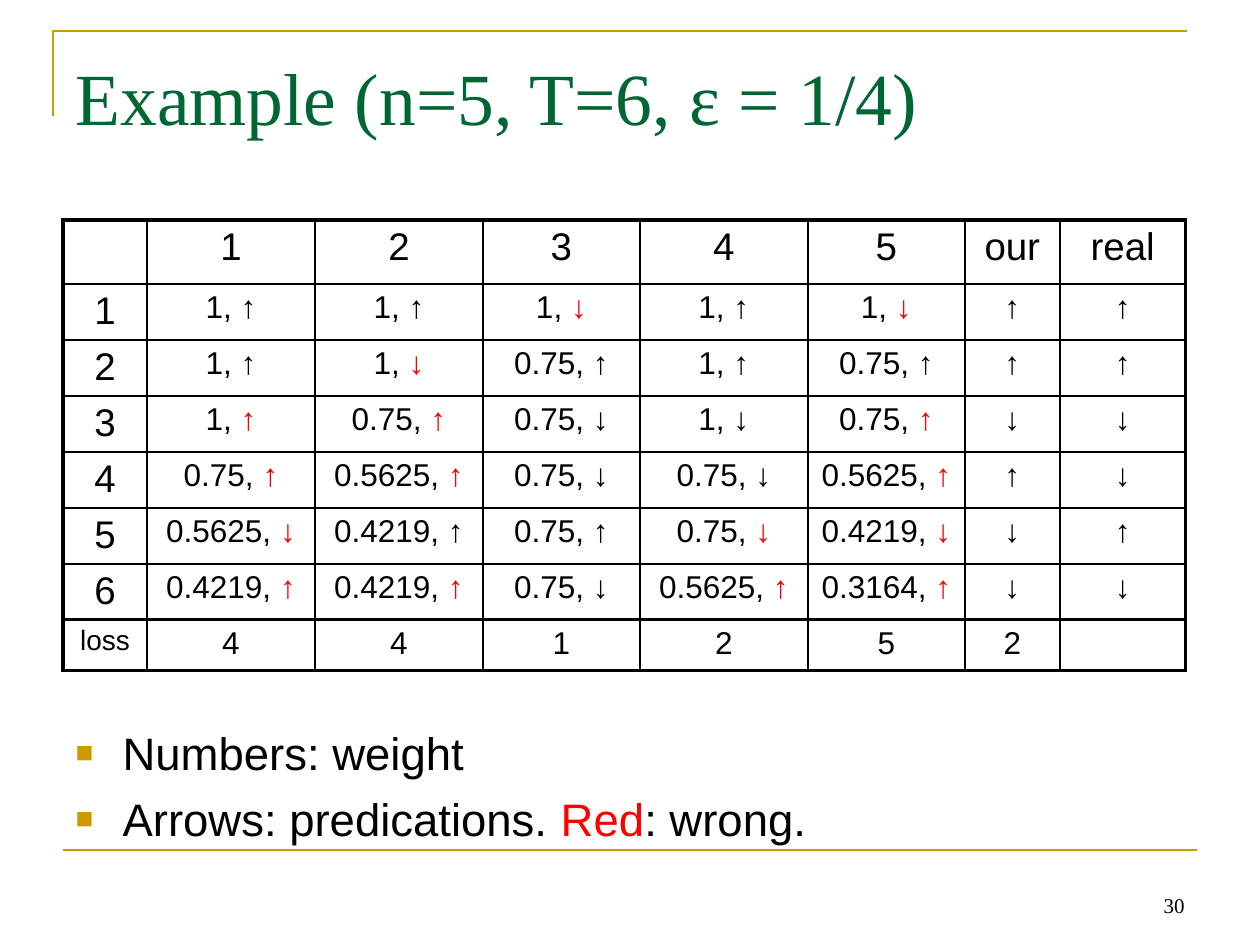
from lxml import etree
from pptx import Presentation
from pptx.dml.color import RGBColor
from pptx.enum.shapes import MSO_CONNECTOR
from pptx.enum.text import MSO_ANCHOR, MSO_AUTO_SIZE, PP_ALIGN
from pptx.oxml import parse_xml
from pptx.oxml.ns import nsdecls, qn
from pptx.util import Pt

LINE = MSO_CONNECTOR.STRAIGHT
TOP, BOTTOM = MSO_ANCHOR.TOP, MSO_ANCHOR.BOTTOM
LEFT, CENTER, RIGHT = PP_ALIGN.LEFT, PP_ALIGN.CENTER, PP_ALIGN.RIGHT
FIXED = MSO_AUTO_SIZE.NONE

GOLD = RGBColor(0xCC, 0x99, 0x00)
GREEN = RGBColor(0x00, 0x66, 0x33)
BLACK = RGBColor(0, 0, 0)
RED = RGBColor(0xFF, 0, 0)
SANS, SERIF = "Arial", "Times New Roman"

HEAD = ["", "1", "2", "3", "4", "5", "our", "real"]
ROUNDS = [
    ["1", "1, ↑", "1, ↑", "1, ↓", "1, ↑", "1, ↓", "↑", "↑"],
    ["2", "1, ↑", "1, ↓", "0.75, ↑", "1, ↑", "0.75, ↑", "↑", "↑"],
    ["3", "1, ↑", "0.75, ↑", "0.75, ↓", "1, ↓", "0.75, ↑", "↓", "↓"],
    ["4", "0.75, ↑", "0.5625, ↑", "0.75, ↓", "0.75, ↓", "0.5625, ↑", "↑", "↓"],
    ["5", "0.5625, ↓", "0.4219, ↑", "0.75, ↑", "0.75, ↓", "0.4219, ↓", "↓", "↑"],
    ["6", "0.4219, ↑", "0.4219, ↑", "0.75, ↓", "0.5625, ↑", "0.3164, ↑", "↓", "↓"],
]
LOSS = ["loss", "4", "4", "1", "2", "5", "2", ""]
GRID = [HEAD, *ROUNDS, LOSS]
COLS = [84, 168, 168, 157, 168, 157, 95, 126]
ROWS = [64] + [56] * 6 + [51]


def px(n):
    return round(n * 914400 / 126)


def place(shape, x, y, w, h):
    shape.left, shape.top, shape.width, shape.height = map(px, (x, y, w, h))


def style(font, size, color=BLACK, name=SANS):
    font.size, font.name = Pt(size), name
    font.color.rgb = color


def write(para, parts, size, name=SANS):
    """Fill a paragraph with (text, colour) runs."""
    for text, color in parts:
        run = para.add_run()
        run.text = text
        style(run.font, size, color, name)


def set_frame(frame, anchor, inset):
    frame.word_wrap = True
    frame.auto_size = FIXED
    frame.vertical_anchor = anchor
    frame.margin_top = px(inset)


def add_frame(slide):
    # Corner bracket above the title
    pen = slide.shapes.build_freeform(px(53), px(116))
    pen.add_line_segments([(px(53), px(31)), (px(1187), px(31))], close=False)
    bracket = pen.convert_to_shape()
    bracket.shadow.inherit = False
    bracket.fill.background()
    # Rule above the footer
    rule = slide.shapes.add_connector(LINE, px(63), px(850), px(1197), px(850))
    etree.SubElement(rule._element.spPr, qn("a:effectLst"))
    for shape in (bracket, rule):
        shape.line.color.rgb = GOLD
        shape.line.width = Pt(1.5)


def add_title(slide):
    title = slide.shapes.title
    place(title, 63, 38, 1134, 157)
    set_frame(title.text_frame, TOP, 14)
    para = title.text_frame.paragraphs[0]
    para.alignment = LEFT
    write(para, [("Example (n=5, T=6, ε = 1/4)", GREEN)], 42, SERIF)


def add_edges(cell, row, col):
    """Thick lines around the table and above the loss row, thin elsewhere."""
    last = len(ROWS) - 1
    thick = {
        "lnL": col == 0,
        "lnR": col == len(COLS) - 1,
        "lnT": row in (0, last),
        "lnB": row in (last - 1, last),
    }
    props = cell._tc.get_or_add_tcPr()
    for spot, (tag, bold) in enumerate(thick.items()):
        props.insert(spot, parse_xml(
            f'<a:{tag} {nsdecls("a")} w="{Pt(2.25 if bold else 1)}">'
            f'<a:solidFill><a:srgbClr val="{BLACK}"/></a:solidFill></a:{tag}>'))


def cell_size(row, col):
    if GRID[row] is LOSS:
        return 16 if col == 0 else 18
    return 22 if row == 0 or col == 0 else 18


def cell_parts(row, col):
    """An expert's arrow is red where it differs from the real one."""
    text = GRID[row][col]
    if "," in text and text[-1] != GRID[row][-1]:
        return [(text[:-1], BLACK), (text[-1], RED)]
    return [(text, BLACK)] if text else []


def add_grid(slide):
    frame = slide.shapes.add_table(
        len(ROWS), len(COLS), px(63), px(220), px(sum(COLS)), px(sum(ROWS)))
    table = frame.table
    table.first_row = table.horz_banding = False
    for column, width in zip(table.columns, COLS):
        column.width = px(width)
    for r, height in enumerate(ROWS):
        table.rows[r].height = px(height)
        for c in range(len(COLS)):
            cell = table.cell(r, c)
            cell.fill.background()
            cell.margin_left = cell.margin_right = px(6)
            cell.margin_top, cell.margin_bottom = px(6), px(4)
            para = cell.text_frame.paragraphs[0]
            para.alignment = CENTER
            write(para, cell_parts(r, c), cell_size(r, c))
            add_edges(cell, r, c)


def add_bullet(para):
    props = para._p.get_or_add_pPr()
    props.set("marL", str(px(47)))
    props.set("indent", str(-px(47)))
    color = etree.SubElement(props, qn("a:buClr"))
    etree.SubElement(color, qn("a:srgbClr"), val=str(GOLD))
    etree.SubElement(props, qn("a:buSzPct"), val="65000")
    etree.SubElement(props, qn("a:buFont"), typeface=SANS)
    etree.SubElement(props, qn("a:buChar"), char="■")


def add_list(slide):
    body = slide.placeholders[1]
    place(body, 63, 714, 1134, 131)
    frame = body.text_frame
    set_frame(frame, TOP, 11)
    items = [
        [("Numbers: weight", BLACK)],
        [("Arrows: predications. ", BLACK), ("Red", RED), (": wrong.", BLACK)],
    ]
    for i, parts in enumerate(items):
        para = frame.add_paragraph() if i else frame.paragraphs[0]
        add_bullet(para)
        para.space_before = Pt(6.5 if i else 0)
        write(para, parts, 26)


def add_number(slide):
    box = slide.shapes.add_textbox(px(903), px(861), px(294), px(63))
    set_frame(box.text_frame, BOTTOM, 6)
    para = box.text_frame.paragraphs[0]
    para.alignment = RIGHT
    write(para, [("30", BLACK)], 12, SERIF)


def main():
    deck = Presentation()
    deck.slide_width, deck.slide_height = px(1260), px(945)
    slide = deck.slides.add_slide(deck.slide_layouts[1])
    add_frame(slide)
    add_title(slide)
    add_grid(slide)
    add_list(slide)
    add_number(slide)
    deck.save("out.pptx")


if __name__ == "__main__":
    main()
